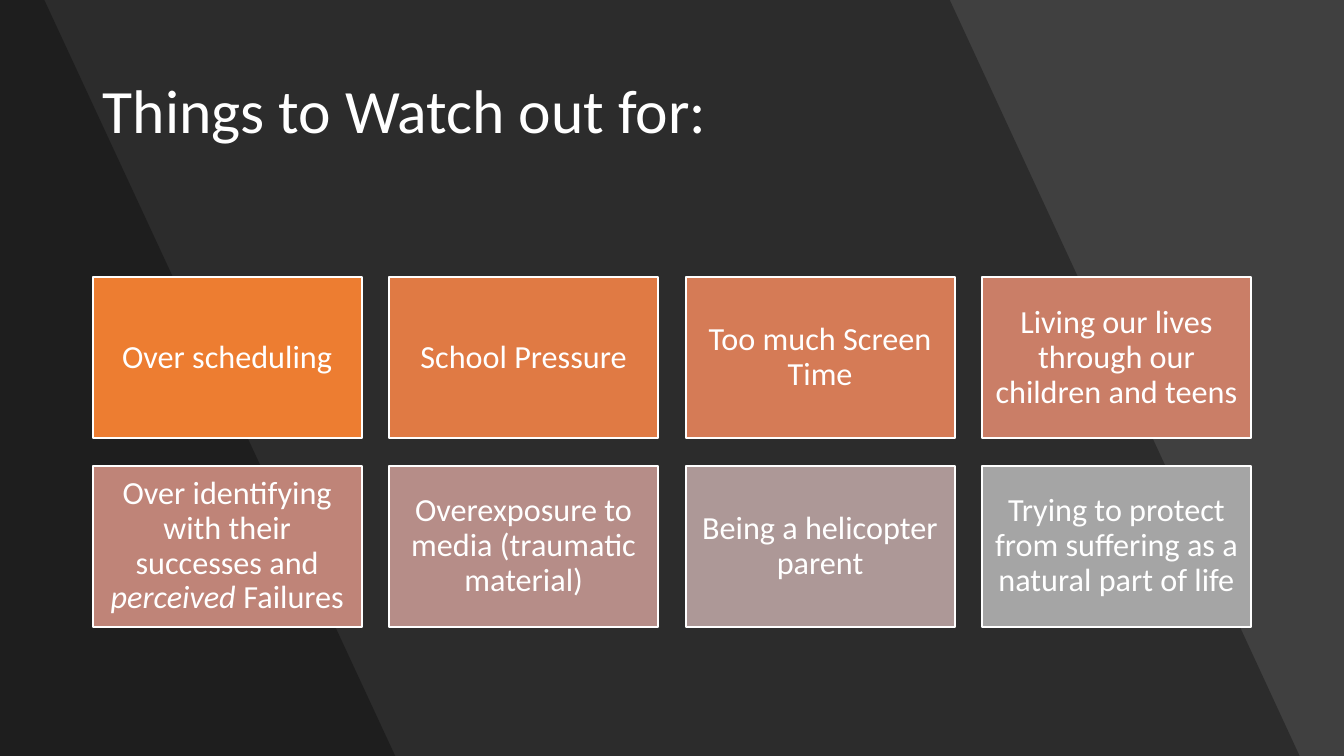
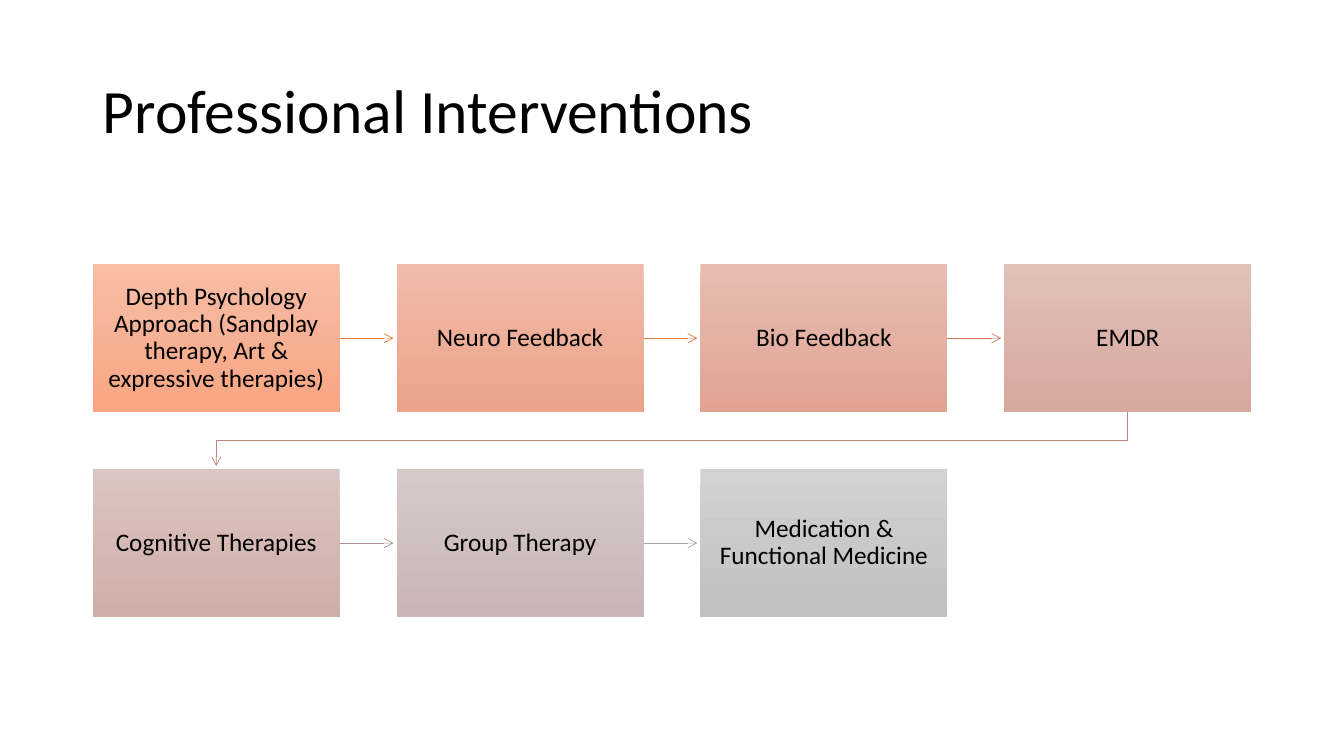
"""Build two slides on parenting pitfalls and professional interventions."""
import pptx
import pptx.util
import pptx.dml.color
import pptx.enum.shapes
import pptx.enum.text
import pptx.oxml.ns
from lxml import etree
from pptx.util import Inches

FONT = "Calibri"
COLORS = {
    "black": "000000",
    "white": "FFFFFF",
    "charcoal": "404040",
    "warnings": ["ED7D31", "E07A44", "D57B56", "CA7E67",
                 "BF8478", "B68D88", "AD9897", "A5A5A5"],
    "step_tops": ["F7BDA5", "EFBCAA", "E7BDB1", "E0C0B9", "DBC4C1", "D6CAC9", "D2D2D2"],
    "step_bottoms": ["F8A582", "ECA389", "E1A493", "D7A89E", "CFAEA9", "C7B6B5", "C0C0C0"],
    "arrows": ["ED7D31", "DC7A4B", "CC7D64", "BD867B", "B09391", "A5A5A5"],
}
SLIDE_W, SLIDE_H = 13.33, 7.5
COLUMNS, GRID_LEFT, GRID_WIDTH = 4, 0.92, 11.49
ARROW_CLEARANCE = 0.03

WARNINGS = [
    "Over scheduling",
    "School Pressure",
    "Too much Screen Time",
    "Living our lives through our children and teens",
    "Over identifying with their successes and *perceived* Failures",
    "Overexposure to media (traumatic material)",
    "Being a helicopter parent",
    "Trying to protect from suffering as a natural part of life",
]
INTERVENTIONS = [
    "Depth Psychology Approach (Sandplay therapy, Art & expressive therapies)",
    "Neuro Feedback",
    "Bio Feedback",
    "EMDR",
    "Cognitive Therapies",
    "Group Therapy",
    "Medication & Functional Medicine",
]


def rgb(value):
    """Turn a hex string into a colour."""
    return pptx.dml.color.RGBColor.from_string(value)


def write(frame, text, size, color, align, inset):
    """Write one paragraph, with parts between asterisks in italics."""
    frame.word_wrap = True
    frame.auto_size = pptx.enum.text.MSO_AUTO_SIZE.NONE
    frame.vertical_anchor = pptx.enum.text.MSO_ANCHOR.MIDDLE
    frame.margin_left = frame.margin_right = Inches(inset)
    frame.margin_top = frame.margin_bottom = Inches(inset)
    paragraph = frame.paragraphs[0]
    paragraph.alignment = align
    paragraph.line_spacing = 0.9
    paragraph.font.name = FONT
    paragraph.font.size = pptx.util.Pt(size)
    paragraph.font.color.rgb = rgb(color)
    for index, part in enumerate(text.split("*")):
        run = paragraph.add_run()
        run.text = part
        if index % 2:
            run.font.italic = True


def add_titled_slide(deck, title, title_color, background):
    """Add a title-only slide with its background and heading."""
    slide = deck.slides.add_slide(deck.slide_layouts[5])
    slide.background.fill.solid()
    slide.background.fill.fore_color.rgb = rgb(background)
    heading = slide.shapes.title
    heading.left, heading.top = Inches(GRID_LEFT), Inches(0.4)
    heading.width, heading.height = Inches(11.5), Inches(1.45)
    write(heading.text_frame, title, 44, title_color, pptx.enum.text.PP_ALIGN.LEFT, 0.1)
    return slide


def add_outline(slide, points, closed):
    """Draw a freeform through points given in inches."""
    start, *rest = [(Inches(x), Inches(y)) for x, y in points]
    builder = slide.shapes.build_freeform(*start)
    builder.add_line_segments(rest, close=closed)
    outline = builder.convert_to_shape()
    outline.shadow.inherit = False
    return outline


def add_shade(slide, top_right, bottom_right):
    """Darken the slide left of a slanted edge, behind the title."""
    corners = [(0, 0), (top_right, 0), (bottom_right, SLIDE_H), (0, SLIDE_H)]
    shade = add_outline(slide, corners, True)
    shade.fill.solid()
    shade.fill.fore_color.rgb = rgb(COLORS["black"])
    shade.line.fill.background()
    tint = shade.element.spPr.find(".//" + pptx.oxml.ns.qn("a:srgbClr"))
    etree.SubElement(tint, pptx.oxml.ns.qn("a:alpha"), val="30000")
    slide.shapes.title.element.addprevious(shade.element)


def grid_gap(width):
    """Give the gap that spreads the columns over the grid."""
    return (GRID_WIDTH - COLUMNS * width) / (COLUMNS - 1)


def grid_cell(index, top, width, height):
    """Give the left and top of a card, with equal gaps both ways."""
    row, column = divmod(index, COLUMNS)
    gap = grid_gap(width)
    return GRID_LEFT + column * (width + gap), top + row * (height + gap)


def add_card(slide, corner, size, text, font_size, color, inset):
    """Add a rectangle with centred text and no fill yet."""
    card = slide.shapes.add_shape(
        pptx.enum.shapes.MSO_SHAPE.RECTANGLE, *map(Inches, corner + size))
    card.shadow.inherit = False
    write(card.text_frame, text, font_size, color, pptx.enum.text.PP_ALIGN.CENTER, inset)
    return card


def style_arrow(arrow, color):
    """Give a line its colour, width and open arrowhead."""
    arrow.line.color.rgb = rgb(color)
    arrow.line.width = pptx.util.Pt(0.5)
    etree.SubElement(arrow.get_or_add_ln(), pptx.oxml.ns.qn("a:tailEnd"), type="arrow")


def add_straight_arrow(slide, x, y, length, color):
    """Draw an arrow to the right."""
    arrow = slide.shapes.add_connector(
        pptx.enum.shapes.MSO_CONNECTOR.STRAIGHT, *map(Inches, (x, y, x + length, y)))
    style_arrow(arrow, color)
    etree.SubElement(arrow.element.spPr, pptx.oxml.ns.qn("a:effectLst"))


def add_return_arrow(slide, start, end, middle, color):
    """Draw an arrow down, back to the left and down again."""
    points = [start, (start[0], middle), (end[0], middle), end]
    arrow = add_outline(slide, points, False)
    arrow.fill.background()
    style_arrow(arrow, color)


def build_warnings(deck):
    """Build the slide of things to watch out for."""
    slide = add_titled_slide(
        deck, "Things to Watch out for:", COLORS["white"], COLORS["charcoal"])
    add_shade(slide, 9.42, 12.89)
    add_shade(slide, 0.44, 3.92)
    size = (2.67, 1.6)
    for index, (warning, color) in enumerate(zip(WARNINGS, COLORS["warnings"])):
        corner = grid_cell(index, 2.75, *size)
        card = add_card(slide, corner, size, warning, 23, COLORS["white"], 0.1)
        card.fill.solid()
        card.fill.fore_color.rgb = rgb(color)
        card.line.color.rgb = rgb(COLORS["white"])
        card.line.width = pptx.util.Pt(1.5)


def build_interventions(deck):
    """Build the slide with the chain of interventions."""
    slide = add_titled_slide(
        deck, "Professional Interventions", COLORS["black"], COLORS["white"])
    size = width, height = (2.45, 1.47)
    gap = grid_gap(width)
    corners = [grid_cell(index, 2.62, *size) for index in range(len(INTERVENTIONS))]
    shades = zip(COLORS["step_tops"], COLORS["step_bottoms"])
    for corner, intervention, stops in zip(corners, INTERVENTIONS, shades):
        card = add_card(slide, corner, size, intervention, 18, COLORS["black"], 0.12)
        card.fill.gradient()
        card.fill.gradient_angle = 270
        for stop, color in zip(card.fill.gradient_stops, stops):
            stop.color.rgb = rgb(color)
        card.line.fill.background()
    for (left, top), (next_left, next_top), color in zip(
            corners, corners[1:], COLORS["arrows"]):
        if next_top == top:
            add_straight_arrow(slide, left + width, top + height / 2,
                               gap - ARROW_CLEARANCE, color)
        else:
            bottom = top + height
            add_return_arrow(slide, (left + width / 2, bottom),
                             (next_left + width / 2, next_top - ARROW_CLEARANCE),
                             bottom + gap / 2, color)


def main():
    """Build and save the deck."""
    deck = pptx.Presentation()
    deck.slide_width, deck.slide_height = Inches(SLIDE_W), Inches(SLIDE_H)
    build_warnings(deck)
    build_interventions(deck)
    deck.save("out.pptx")


if __name__ == "__main__":
    main()
